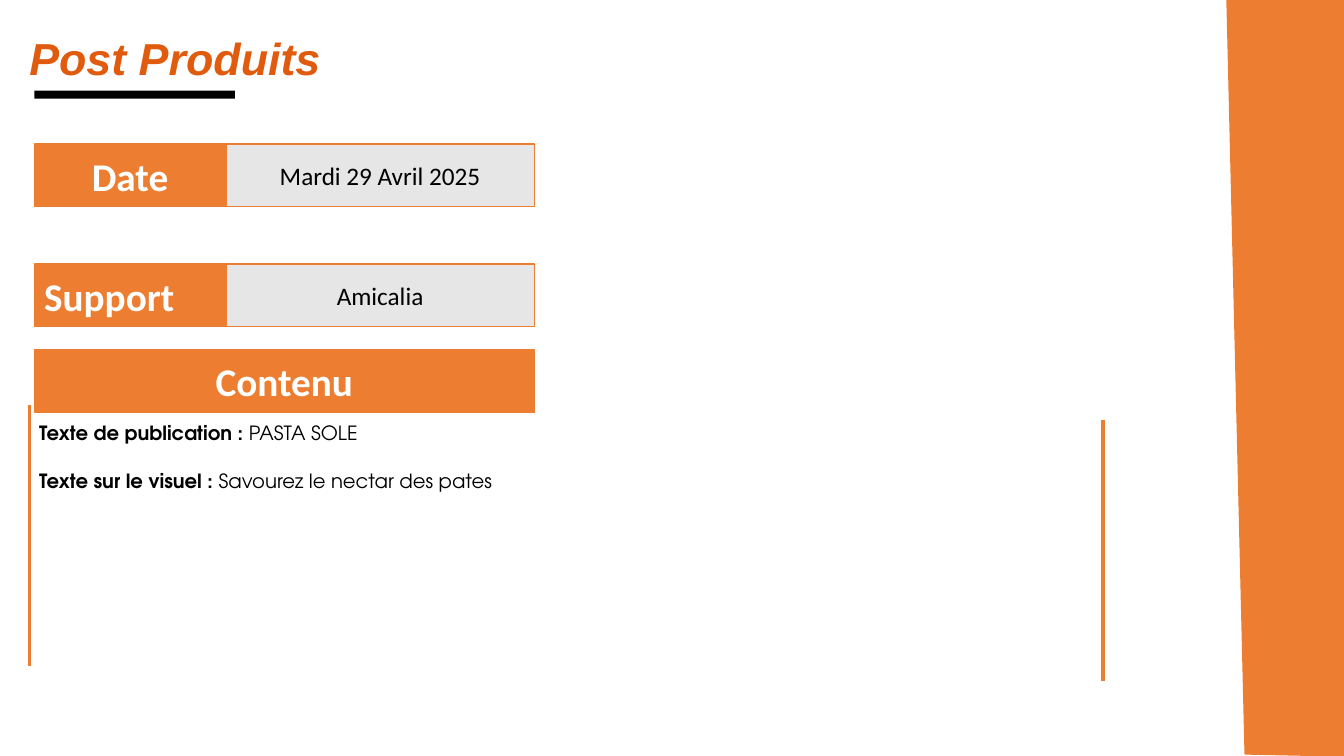
from dataclasses import dataclass

from lxml.etree import SubElement
from pptx import Presentation
from pptx.dml.color import RGBColor
from pptx.enum.shapes import MSO_CONNECTOR, MSO_SHAPE
from pptx.enum.text import MSO_ANCHOR, MSO_AUTO_SIZE, PP_ALIGN
from pptx.oxml.ns import qn
from pptx.util import Inches, Pt


@dataclass(frozen=True)
class Theme:
    orange: RGBColor = RGBColor(0xED, 0x7D, 0x31)
    title_orange: RGBColor = RGBColor(0xE1, 0x5B, 0x0F)
    gray: RGBColor = RGBColor(0xE7, 0xE6, 0xE6)
    black: RGBColor = RGBColor(0, 0, 0)
    white: RGBColor = RGBColor(0xFF, 0xFF, 0xFF)
    title_size: Pt = Pt(32)
    label_size: Pt = Pt(28)
    value_size: Pt = Pt(18)
    body_size: Pt = Pt(14)
    box_line: Pt = Pt(1)
    rule_line: Pt = Pt(2.25)
    paragraph_gap: Pt = Pt(17)


THEME = Theme()
LEFT = 0.34
LABEL_WIDTH = 1.9
VALUE_WIDTH = 3.06
ROW_HEIGHT = 0.62
RULE_HEIGHT = 2.59

TITLE_FORMAT = {"name": "Arial", "size": THEME.title_size, "bold": True, "italic": True}
LABEL_FORMAT = {"name": "Calibri", "size": THEME.label_size, "bold": True}
VALUE_FORMAT = {"name": "Calibri", "size": THEME.value_size, "bold": False}
BODY_FORMAT = {"name": "TeX Gyre Adventor", "size": THEME.body_size}


def add_span(para, text, formats, color):
    span = para.add_run()
    span.text = text
    for name, value in formats.items():
        setattr(span.font, name, value)
    span.font.color.rgb = color


def paint(shape, fill, line=None):
    shape.shadow.inherit = False
    shape.fill.solid()
    shape.fill.fore_color.rgb = fill
    if line is None:
        shape.line.fill.background()
    else:
        shape.line.color.rgb = line
        shape.line.width = THEME.box_line


def add_bar(page, left, top, width, height, fill, line=None):
    bar = page.shapes.add_shape(
        MSO_SHAPE.RECTANGLE, Inches(left), Inches(top), Inches(width), Inches(height)
    )
    paint(bar, fill, line)
    return bar


def add_cell(page, left, top, width, text, fill, formats, color, align=PP_ALIGN.CENTER):
    cell = add_bar(page, left, top, width, ROW_HEIGHT, fill, THEME.orange)
    cell.text_frame.word_wrap = True
    cell.text_frame.vertical_anchor = MSO_ANCHOR.MIDDLE
    para = cell.text_frame.paragraphs[0]
    para.alignment = align
    add_span(para, text, formats, color)


def add_label(page, top, width, text, align=PP_ALIGN.CENTER):
    add_cell(page, LEFT, top, width, text, THEME.orange, LABEL_FORMAT, THEME.white, align)


def add_field(page, top, label, value, align):
    add_label(page, top, LABEL_WIDTH, label, align)
    add_cell(page, LEFT + LABEL_WIDTH, top, VALUE_WIDTH, value,
             THEME.gray, VALUE_FORMAT, THEME.black)


def add_rule(page, left, top):
    rule = page.shapes.add_connector(
        MSO_CONNECTOR.STRAIGHT,
        Inches(left), Inches(top), Inches(left), Inches(top + RULE_HEIGHT),
    )
    rule.line.color.rgb = THEME.orange
    rule.line.width = THEME.rule_line
    SubElement(rule._element.spPr, qn("a:effectLst"))


def add_side_band(page):
    corners = [(12.17, 0), (13.33, 0), (13.34, 7.5), (12.35, 7.48)]
    points = [(Inches(x), Inches(y)) for x, y in corners]
    builder = page.shapes.build_freeform(*points[0])
    builder.add_line_segments(points[1:], close=True)
    paint(builder.convert_to_shape(), THEME.orange, THEME.orange)


def set_title(page, text):
    title = page.shapes.title
    place = {"left": 0.19, "top": 0.25, "width": 11.03, "height": 0.52}
    for name, value in place.items():
        setattr(title, name, Inches(value))
    frame = title.text_frame
    frame.auto_size = MSO_AUTO_SIZE.NONE
    frame.vertical_anchor = MSO_ANCHOR.TOP
    para = frame.paragraphs[0]
    para.alignment = PP_ALIGN.JUSTIFY
    add_span(para, text, TITLE_FORMAT, THEME.title_orange)


def add_content(page, entries):
    box = page.shapes.add_textbox(Inches(0.29), Inches(4.13), Inches(10.82), Inches(1.48))
    frame = box.text_frame
    frame.word_wrap = True
    for index, (heading, text) in enumerate(entries):
        para = frame.add_paragraph() if index else frame.paragraphs[0]
        para.alignment = PP_ALIGN.JUSTIFY if index else PP_ALIGN.LEFT
        para.space_before = THEME.paragraph_gap if index else Pt(0)
        add_span(para, heading, BODY_FORMAT | {"bold": True}, THEME.black)
        add_span(para, text, BODY_FORMAT | {"bold": False}, THEME.black)


def main():
    deck = Presentation()
    deck.slide_width = Inches(13.33)
    deck.slide_height = Inches(7.5)
    page = deck.slides.add_slide(deck.slide_layouts[5])

    add_side_band(page)
    set_title(page, "Post Produits")
    add_bar(page, LEFT, 0.9, 1.99, 0.08, THEME.black)
    add_field(page, 1.43, "Date", "Mardi 29 Avril 2025", PP_ALIGN.CENTER)
    add_field(page, 2.62, "Support", "Amicalia", PP_ALIGN.LEFT)
    add_rule(page, 0.29, 4.02)
    add_label(page, 3.47, LABEL_WIDTH + VALUE_WIDTH, "Contenu")
    add_rule(page, 10.94, 4.17)
    add_content(page, [
        ("Texte de publication : ", "PASTA SOLE"),
        ("Texte sur le visuel : ", "Savourez le nectar des pates"),
    ])

    deck.save("out.pptx")


if __name__ == "__main__":
    main()
